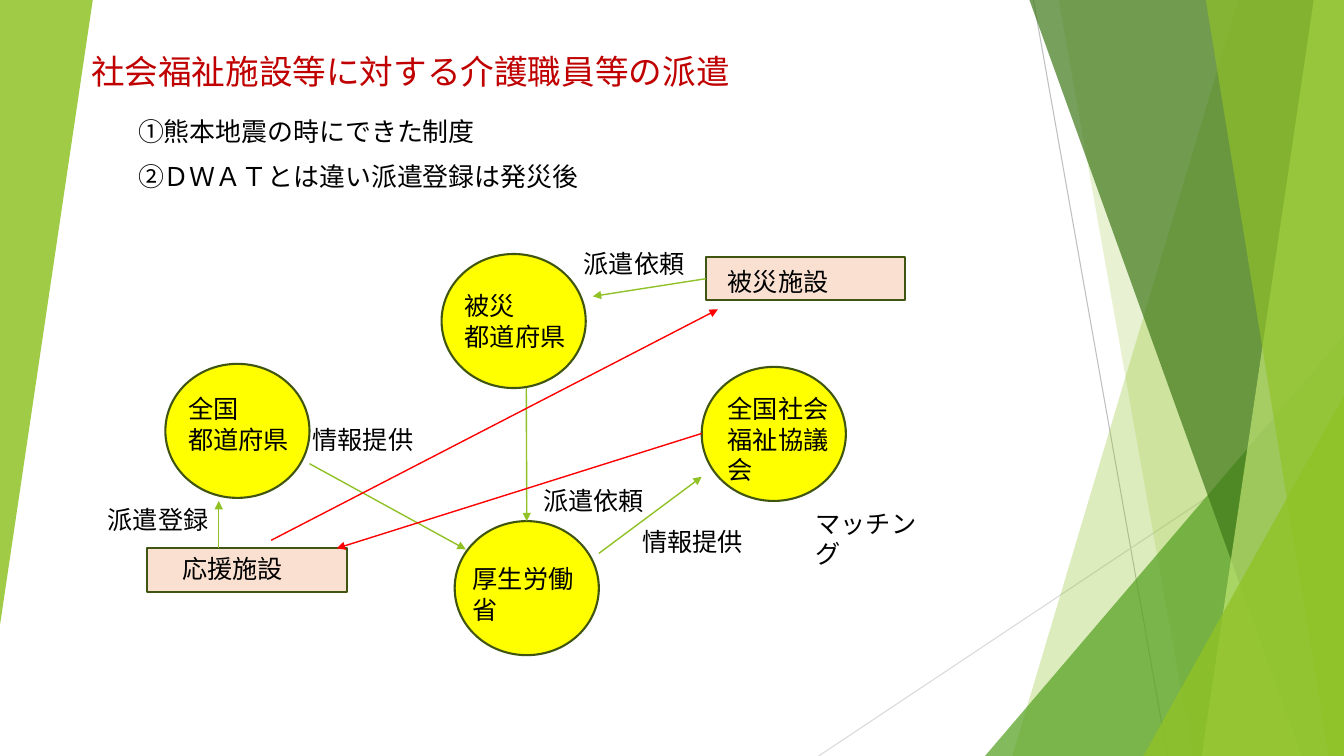
from dataclasses import dataclass
from typing import Optional

from lxml.etree import SubElement
from pptx import Presentation
from pptx.dml.color import RGBColor
from pptx.enum.shapes import MSO_CONNECTOR, MSO_SHAPE
from pptx.enum.text import MSO_ANCHOR, MSO_AUTO_SIZE, PP_ALIGN
from pptx.oxml.ns import qn
from pptx.util import Inches, Pt

COLORS = {
    "black": "000000", "title": "C00000", "yellow": "FFFF00", "peach": "FAE0D1",
    "outline": "3F5511", "green": "90C226", "leaf": "54A021", "forest": "3F7819",
    "lime": "C0E474", "red": "FF0000", "gray": "BFBFBF", "pale_gray": "D9D9D9",
}
JAPANESE_FONT = "Noto Sans CJK JP"
NODE_FONT = "Cabin"
CELL = Inches(0.1)
COLUMNS, ROWS = 133.3, 75
CIRCLE_SIZE = (14.3, 13.3)
BOX_SIZE = (19.8, 4.3)
LINE_PITCH = 1.21


@dataclass
class Facet:
    color: str
    opacity: int
    top: float
    bottom: float


@dataclass
class Wedge:
    color: str
    opacity: int
    area: tuple
    rotation: int = 0


@dataclass
class Node:
    name: str
    left: float
    top: float
    lines: tuple
    text_area: tuple
    circle: bool = True


@dataclass
class Label:
    text: str
    left: float
    top: float
    width: float = 12.1


@dataclass
class Arrow:
    start: tuple
    end: tuple
    color: str = "green"
    start_node: Optional[tuple] = None
    end_node: Optional[tuple] = None


DECORATION = [
    Facet("green", 30, 122.8, 100.4),
    Facet("green", 20, 105, 118.3),
    Wedge("leaf", 72, (97.7, 33.3, 35.6, 41.7)),
    Facet("forest", 70, 102.1, 129.1),
    Facet("lime", 70, 130.3, 119.2),
    Facet("green", 65, 119.6, 131.8),
    Wedge("green", 80, (113.4, 39.3, 19.9, 35.7)),
    Wedge("green", 85, (0, 0, 9.2, 62), 180),
]
NODES = [
    Node("affected prefecture", 43.8, 25.2, ("被災", "都道府県"), (45.1, 28.3, 12.3, 7.1)),
    Node("prefectures", 16.4, 36.1, ("全国", "都道府県"), (17.7, 38.5, 12.3, 7.1)),
    Node("ministry", 45.1, 51.7, ("厚生労働省",), (45.9, 55.4, 12.3, 7.1)),
    Node("council", 69.6, 36.4, ("全国社会福祉協議会",), (71.2, 38.5, 12.3, 10.1)),
    Node("affected facility", 70, 25.5, ("被災施設",), (71.2, 25.9, 12.3, 4), False),
    Node("supporting facility", 14.6, 54.4, ("応援施設",), (17.1, 54.4, 12.3, 4), False),
]
ARROWS = [
    Arrow((21.7, 54.4), (21.7, 49.7)),
    Arrow((30.7, 46), (46.2, 54.5)),
    Arrow((70, 27.6), (58.8, 29.4), start_node=("affected facility", 1)),
    Arrow((59.4, 54.9), (69.6, 47.3)),
    Arrow((52.2, 38.5), (52.2, 51.7), end_node=("ministry", 0)),
    Arrow((26.9, 53.6), (71.2, 30.7), "red"),
    Arrow((69.6, 43), (33.4, 54.4), "red"),
]
LABELS = [
    Label("派遣登録", 9.7, 49.5),
    Label("派遣依頼", 56.9, 24.1),
    Label("情報提供", 30, 41.6),
    Label("マッチング", 79.9, 49.9, 13),
    Label("情報提供", 62.7, 51.7),
    Label("派遣依頼", 52.9, 47.6),
]


def grid(*lengths: float) -> list:
    return [round(length * CELL) for length in lengths]


def rgb(color: str) -> RGBColor:
    return RGBColor.from_string(COLORS[color])


def place(shape, area: tuple) -> None:
    shape.left, shape.top, shape.width, shape.height = grid(*area)


def write(text_frame, lines: tuple, size: float, font_name: str,
          color: str = "black", alignment=PP_ALIGN.LEFT) -> None:
    text_frame.word_wrap = True
    text_frame.auto_size = MSO_AUTO_SIZE.NONE
    for index, line in enumerate(lines):
        paragraph = text_frame.add_paragraph() if index else text_frame.paragraphs[0]
        paragraph.alignment = alignment
        paragraph.line_spacing = Pt(round(size * LINE_PITCH, 1))
        run = paragraph.add_run()
        run.text = line
        run.font.size = Pt(size)
        run.font.name = font_name
        run.font.color.rgb = rgb(color)
        SubElement(run.font._element, qn("a:ea"), typeface=font_name)


def paint(shape, color: str, opacity: int = 100, outline: str = "") -> None:
    shape.shadow.inherit = False
    shape.fill.solid()
    shape.fill.fore_color.rgb = rgb(color)
    if opacity < 100:
        fill_color = shape._element.spPr.find(qn("a:solidFill"))[0]
        SubElement(fill_color, qn("a:alpha"), val=str(opacity * 1000))
    if outline:
        shape.line.color.rgb = rgb(outline)
        shape.line.width = Pt(1.5)
    else:
        shape.line.fill.background()


def draw_line(slide, start: tuple, end: tuple, color: str, width: float):
    connector = slide.shapes.add_connector(MSO_CONNECTOR.STRAIGHT, *grid(*start, *end))
    connector.line.color.rgb = rgb(color)
    connector.line.width = Pt(width)
    SubElement(connector._element.spPr, qn("a:effectLst"))
    return connector


def draw_facet(slide, facet: Facet) -> None:
    builder = slide.shapes.build_freeform(*grid(facet.top, 0))
    corners = [(COLUMNS, 0), (COLUMNS, ROWS), (facet.bottom, ROWS)]
    builder.add_line_segments([tuple(grid(*corner)) for corner in corners], close=True)
    paint(builder.convert_to_shape(), facet.color, facet.opacity)


def draw_wedge(slide, wedge: Wedge) -> None:
    shape = slide.shapes.add_shape(MSO_SHAPE.ISOSCELES_TRIANGLE, *grid(*wedge.area))
    shape.adjustments[0] = 1
    shape.rotation = wedge.rotation
    paint(shape, wedge.color, wedge.opacity)


def draw_node(slide, node: Node):
    kind, size, color = ((MSO_SHAPE.OVAL, CIRCLE_SIZE, "yellow") if node.circle
                         else (MSO_SHAPE.RECTANGLE, BOX_SIZE, "peach"))
    shape = slide.shapes.add_shape(kind, *grid(node.left, node.top, *size))
    paint(shape, color, outline="outline")
    return shape


def draw_text(slide, lines: tuple, area: tuple, font_name: str) -> None:
    write(slide.shapes.add_textbox(*grid(*area)).text_frame, lines, 18, font_name)


def draw_arrow(slide, arrow: Arrow, shapes: dict) -> None:
    connector = draw_line(slide, arrow.start, arrow.end, arrow.color, 1)
    if arrow.start_node:
        name, side = arrow.start_node
        connector.begin_connect(shapes[name], side)
    if arrow.end_node:
        name, side = arrow.end_node
        connector.end_connect(shapes[name], side)
    SubElement(connector.line._get_or_add_ln(), qn("a:tailEnd"), type="triangle")


def main() -> None:
    presentation = Presentation()
    presentation.slide_width, presentation.slide_height = grid(COLUMNS, ROWS)
    slide = presentation.slides.add_slide(presentation.slide_layouts[0])

    title, subtitle = slide.placeholders
    place(title, (7.1, 4.4, 67.2, 5.2))
    write(title.text_frame, ("社会福祉施設等に対する介護職員等の派遣",), 24,
          JAPANESE_FONT, "title", PP_ALIGN.CENTER)
    title.text_frame.vertical_anchor = MSO_ANCHOR.BOTTOM
    title.text_frame.paragraphs[0].line_spacing = 0.9
    place(subtitle, (12.7, 10.9, 48.1, 8.7))
    write(subtitle.text_frame, ("①熊本地震の時にできた制度", "②ＤＷＡＴとは違い派遣登録は発災後"),
          18.5, JAPANESE_FONT)
    for paragraph in subtitle.text_frame.paragraphs:
        paragraph.space_before = Pt(10)

    draw_line(slide, (102.5, 0), (115.8, ROWS), "gray", 0.75)
    draw_line(slide, (COLUMNS, 40.3), (81.2, ROWS), "pale_gray", 0.75)
    for piece in DECORATION:
        if isinstance(piece, Facet):
            draw_facet(slide, piece)
        else:
            draw_wedge(slide, piece)

    shapes = {node.name: draw_node(slide, node) for node in NODES}
    for node in NODES:
        draw_text(slide, node.lines, node.text_area, NODE_FONT)
    for arrow in ARROWS:
        draw_arrow(slide, arrow, shapes)
    for label in LABELS:
        draw_text(slide, (label.text,), (label.left, label.top, label.width, 4), JAPANESE_FONT)

    presentation.save("out.pptx")


if __name__ == "__main__":
    main()
